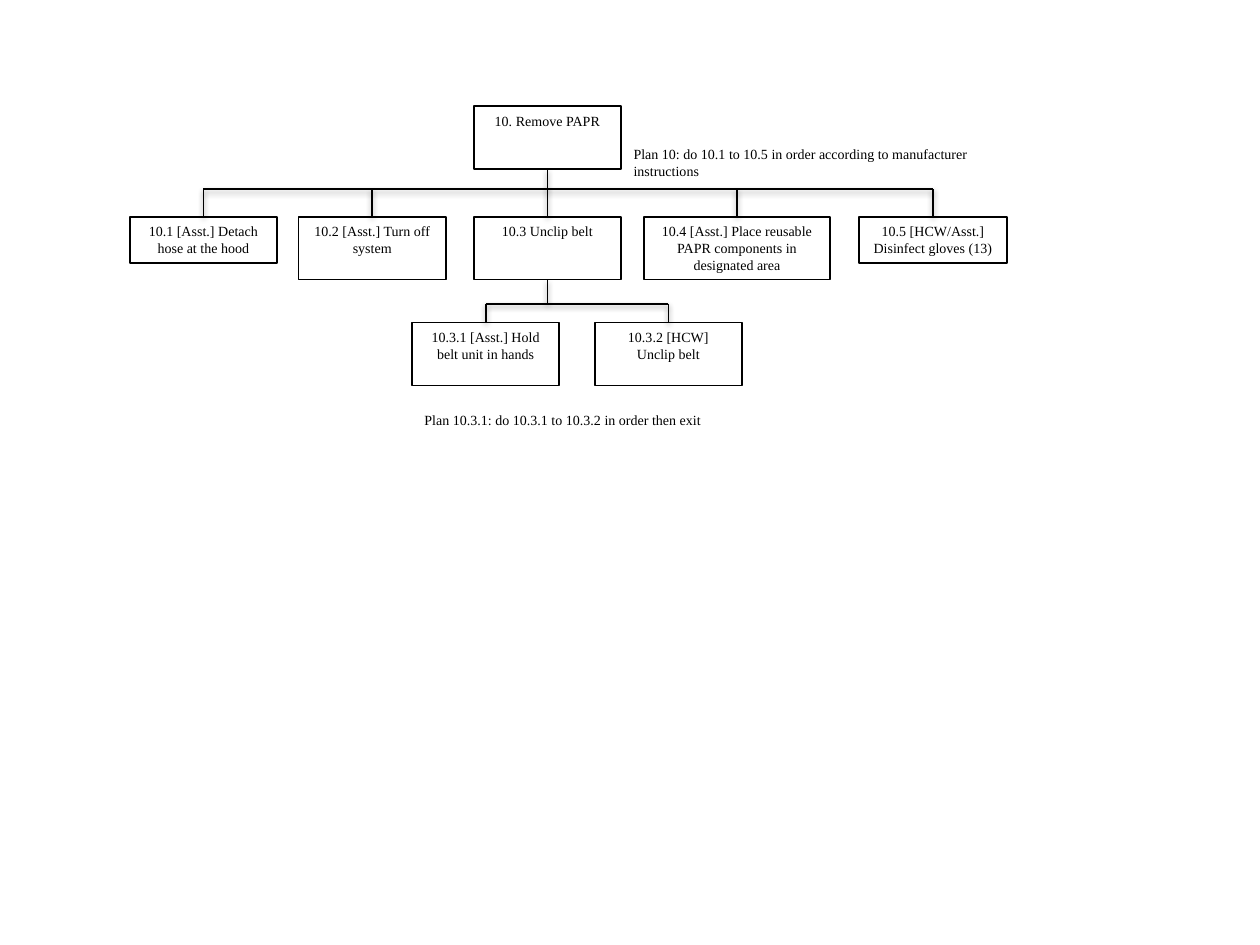
from dataclasses import dataclass

import pptx
import pptx.dml.color
import pptx.enum.shapes
import pptx.enum.text
import pptx.oxml
import pptx.oxml.ns
import pptx.util
from pptx.shapes.autoshape import Shape
from pptx.shapes.shapetree import SlideShapes

BLACK = pptx.dml.color.RGBColor(0x00, 0x00, 0x00)
WHITE = pptx.dml.color.RGBColor(0xFF, 0xFF, 0xFF)
FONT = "Times New Roman"
SLIDE_WIDTH = pptx.util.Inches(10)
SLIDE_HEIGHT = pptx.util.Inches(7.5)
COLUMN = SLIDE_WIDTH / 100
ROW = SLIDE_HEIGHT / 75
STEP_WIDTH = 11.7
STEP_HEIGHT = 5
SHORT_HEIGHT = 3.7
TASK_TOP = 8.4
STEP_TOP = 17.2
SUBSTEP_TOP = 25.6
STEP_BUS = 15
SUBSTEP_BUS = 24.1
SHADOW = (
    f'<a:effectLst {pptx.oxml.ns.nsdecls("a")}>'
    '<a:outerShdw blurRad="40000" dist="20000" dir="5400000" rotWithShape="0">'
    '<a:srgbClr val="000000"><a:alpha val="38000"/></a:srgbClr>'
    "</a:outerShdw></a:effectLst>"
)


@dataclass(frozen=True)
class Step:
    text: str
    left: float
    top: float
    width: float = STEP_WIDTH
    height: float = STEP_HEIGHT

    @property
    def center(self) -> float:
        return self.left + self.width / 2

    @property
    def bottom(self) -> float:
        return self.top + self.height


@dataclass(frozen=True)
class Plan:
    text: str
    left: float
    top: float
    width: float
    height: float


TASK = Step("10. Remove PAPR", 37.6, TASK_TOP)
UNCLIP = Step("10.3 Unclip belt", 37.6, STEP_TOP)
STEPS = [
    Step("10.1 [Asst.] Detach hose at the hood", 10.3, STEP_TOP, height=SHORT_HEIGHT),
    Step("10.2 [Asst.] Turn off system", 23.7, STEP_TOP),
    UNCLIP,
    Step("10.4 [Asst.] Place reusable PAPR components in designated area",
         51.1, STEP_TOP, width=14.8),
    Step("10.5 [HCW/Asst.] Disinfect gloves (13)", 68.2, STEP_TOP, height=SHORT_HEIGHT),
]
SUBSTEPS = [
    Step("10.3.1 [Asst.] Hold belt unit in hands", 32.7, SUBSTEP_TOP),
    Step("10.3.2 [HCW] Unclip belt", 47.2, SUBSTEP_TOP),
]
PLANS = [
    Plan("Plan 10: do 10.1 to 10.5 in order according to manufacturer instructions",
         49.3, 11.1, 30.6, 3.7),
    Plan("Plan 10.3.1: do 10.3.1 to 10.3.2 in order then exit", 32.7, 32.2, 25.2, 2.4),
]


def across(columns: float) -> int:
    return round(columns * COLUMN)


def down(rows: float) -> int:
    return round(rows * ROW)


def write(holder: Shape, text: str, alignment: pptx.enum.text.PP_ALIGN) -> None:
    frame = holder.text_frame
    frame.word_wrap = True
    frame.vertical_anchor = pptx.enum.text.MSO_ANCHOR.TOP
    paragraph = frame.paragraphs[0]
    paragraph.text = text
    paragraph.alignment = alignment
    paragraph.font.name = FONT
    paragraph.font.size = pptx.util.Pt(8)
    paragraph.font.color.rgb = BLACK


def draw_step(shapes: SlideShapes, step: Step) -> None:
    box = shapes.add_shape(
        pptx.enum.shapes.MSO_SHAPE.RECTANGLE,
        across(step.left), down(step.top), across(step.width), down(step.height),
    )
    box.shadow.inherit = False
    box.fill.solid()
    box.fill.fore_color.rgb = WHITE
    box.line.color.rgb = BLACK
    box.line.width = pptx.util.Pt(1)
    write(box, step.text, pptx.enum.text.PP_ALIGN.CENTER)


def draw_plan(shapes: SlideShapes, plan: Plan) -> None:
    note = shapes.add_textbox(
        across(plan.left), down(plan.top), across(plan.width), down(plan.height)
    )
    write(note, plan.text, pptx.enum.text.PP_ALIGN.LEFT)


def draw_line(shapes: SlideShapes, x1: float, y1: float, x2: float, y2: float) -> None:
    line = shapes.add_connector(
        pptx.enum.shapes.MSO_CONNECTOR.STRAIGHT,
        across(x1), down(y1), across(x2), down(y2),
    )
    line.line.color.rgb = BLACK
    line.line.width = pptx.util.Pt(1)
    line.element.spPr.append(pptx.oxml.parse_xml(SHADOW))


def draw_branches(
    shapes: SlideShapes, parent: Step, children: list[Step], bus: float
) -> None:
    draw_line(shapes, children[0].center, bus, children[-1].center, bus)
    draw_line(shapes, parent.center, parent.bottom, parent.center, bus)
    for child in children:
        draw_line(shapes, child.center, bus, child.center, child.top)


def main() -> None:
    deck = pptx.Presentation()
    deck.slide_width = SLIDE_WIDTH
    deck.slide_height = SLIDE_HEIGHT
    shapes = deck.slides.add_slide(deck.slide_layouts[6]).shapes
    for step in [TASK, *STEPS, *SUBSTEPS]:
        draw_step(shapes, step)
    draw_branches(shapes, TASK, STEPS, STEP_BUS)
    draw_branches(shapes, UNCLIP, SUBSTEPS, SUBSTEP_BUS)
    for plan in PLANS:
        draw_plan(shapes, plan)
    deck.save("out.pptx")


if __name__ == "__main__":
    main()
